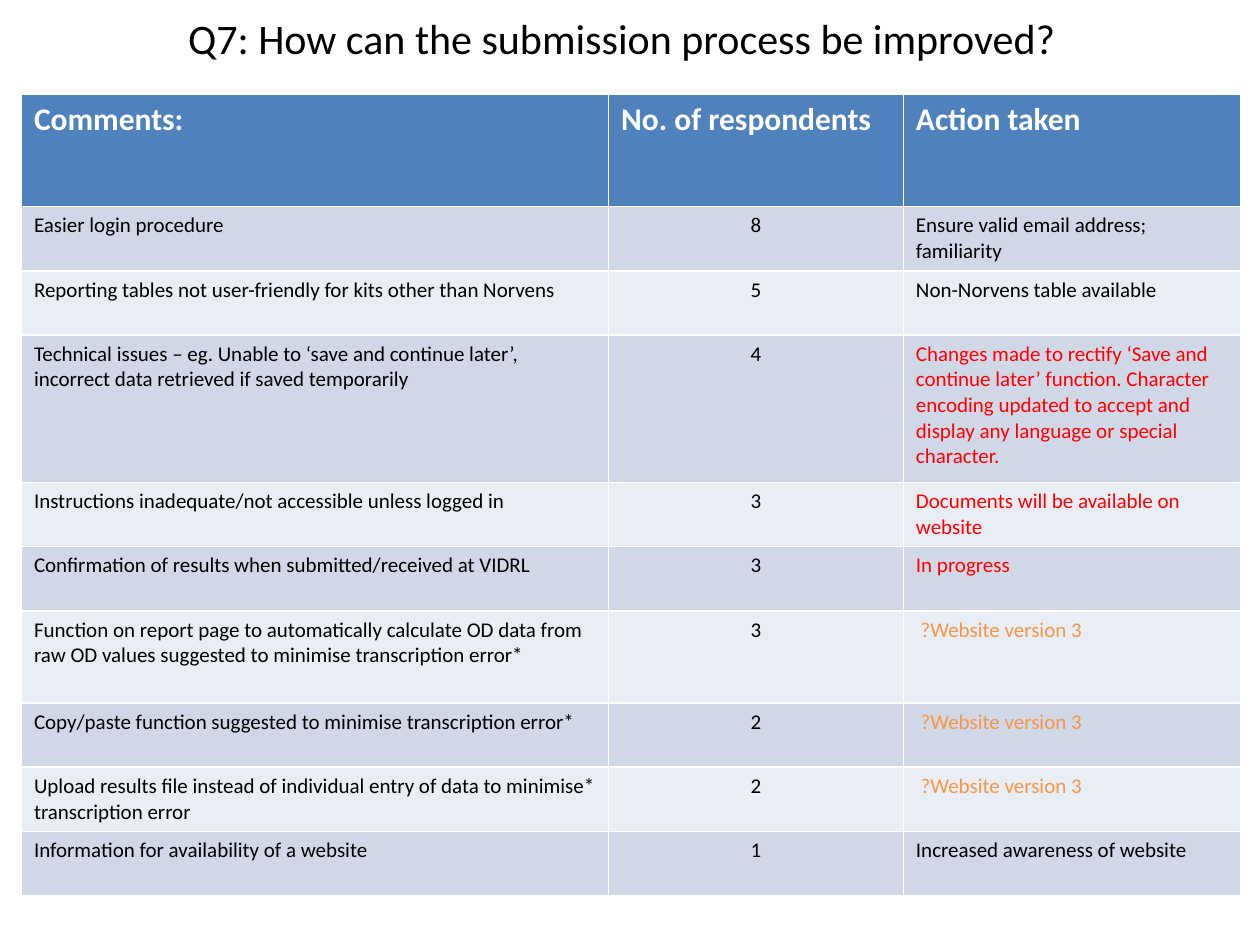
from pptx import Presentation
from pptx.dml.color import RGBColor
from pptx.enum.text import MSO_ANCHOR, PP_ALIGN
from pptx.util import Inches, Pt

FONT = "Calibri"
COLORS = {
    "head": "4F81BD", "odd": "D0D8E8", "even": "E9EDF4",
    "white": "FFFFFF", "black": "000000", "red": "FF0000", "orange": "F79646",
}
COLS = [4.66, 2.34, 2.68]
HEADS = ["Comments:", "No. of respondents", "Action taken"]
# comment, respondents, action, action colour, row height
ROWS = [
    ("Easier login procedure", 8,
     "Ensure valid email address; familiarity", "black", 0.51),
    ("Reporting tables not user-friendly for kits other than Norvens", 5,
     "Non-Norvens table available", "black", 0.51),
    ("Technical issues – eg. Unable to ‘save and continue later’, "
     "incorrect data retrieved if saved temporarily", 4,
     "Changes made to rectify ‘Save and continue later’ function. Character "
     "encoding updated to accept and display any language or special character.",
     "red", 1.17),
    ("Instructions inadequate/not accessible unless logged in", 3,
     "Documents will be available on website", "red", 0.51),
    ("Confirmation of results when submitted/received at VIDRL", 3,
     "In progress", "red", 0.51),
    ("Function on report page to automatically calculate OD data from raw OD "
     "values suggested to minimise transcription error*", 3,
     " ?Website version 3", "orange", 0.73),
    ("Copy/paste function suggested to minimise transcription error*", 2,
     " ?Website version 3", "orange", 0.51),
    ("Upload results file instead of individual entry of data to minimise* "
     "transcription error", 2,
     " ?Website version 3", "orange", 0.51),
    ("Information for availability of a website", 1,
     "Increased awareness of website", "black", 0.51),
]
HEAD_HIGH = 0.89


def rgb(name):
    return RGBColor.from_string(COLORS[name])


def write(frame, text, size, color, bold=False, align=PP_ALIGN.LEFT):
    frame.text = text
    para = frame.paragraphs[0]
    para.alignment = align
    font = para.runs[0].font
    font.name, font.size, font.bold = FONT, Pt(size), bold
    font.color.rgb = rgb(color)


def add_title(slide, left, top, width, height):
    box = slide.shapes.add_textbox(
        Inches(left), Inches(top), Inches(width), Inches(height))
    frame = box.text_frame
    frame.word_wrap = True
    frame.vertical_anchor = MSO_ANCHOR.MIDDLE
    frame.margin_right = Inches(0.26)
    write(frame, "Q7: How can the submission process be improved?",
          24, "black", align=PP_ALIGN.CENTER)


def fill_cell(cell, fill, *args, **kwargs):
    cell.fill.solid()
    cell.fill.fore_color.rgb = rgb(fill)
    write(cell.text_frame, *args, **kwargs)


def add_answers(slide, left, top):
    highs = [HEAD_HIGH] + [row[-1] for row in ROWS]
    table = slide.shapes.add_table(
        len(highs), len(COLS), Inches(left), Inches(top),
        Inches(sum(COLS)), Inches(sum(highs))).table
    for col, wide in zip(table.columns, COLS):
        col.width = Inches(wide)
    for row, high in zip(table.rows, highs):
        row.height = Inches(high)

    for c, head in enumerate(HEADS):
        fill_cell(table.cell(0, c), "head", head, 18, "white", bold=True)
    for r, (comment, count, action, color, _) in enumerate(ROWS, 1):
        band = "odd" if r % 2 else "even"
        fill_cell(table.cell(r, 0), band, comment, 12, "black")
        fill_cell(table.cell(r, 1), band, str(count), 12, "black",
                  align=PP_ALIGN.CENTER)
        fill_cell(table.cell(r, 2), band, action, 12, color)


def main():
    deck = Presentation()
    deck.slide_width, deck.slide_height = Inches(10), Inches(7.5)
    slide = deck.slides.add_slide(deck.slide_layouts[6])
    add_title(slide, 0.17, 0.03, 9.69, 0.54)
    add_answers(slide, 0.17, 0.75)
    deck.save("out.pptx")


if __name__ == "__main__":
    main()
